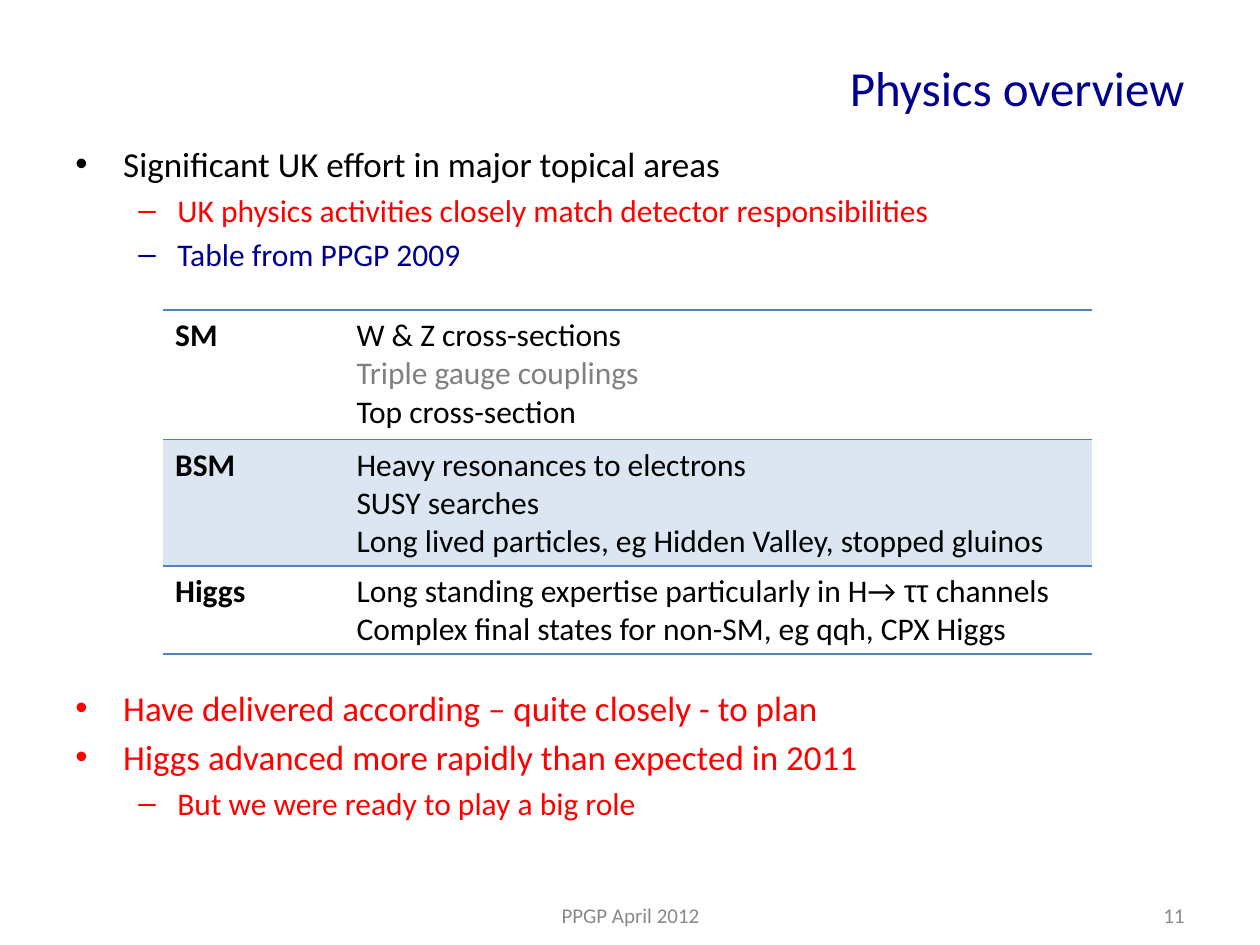
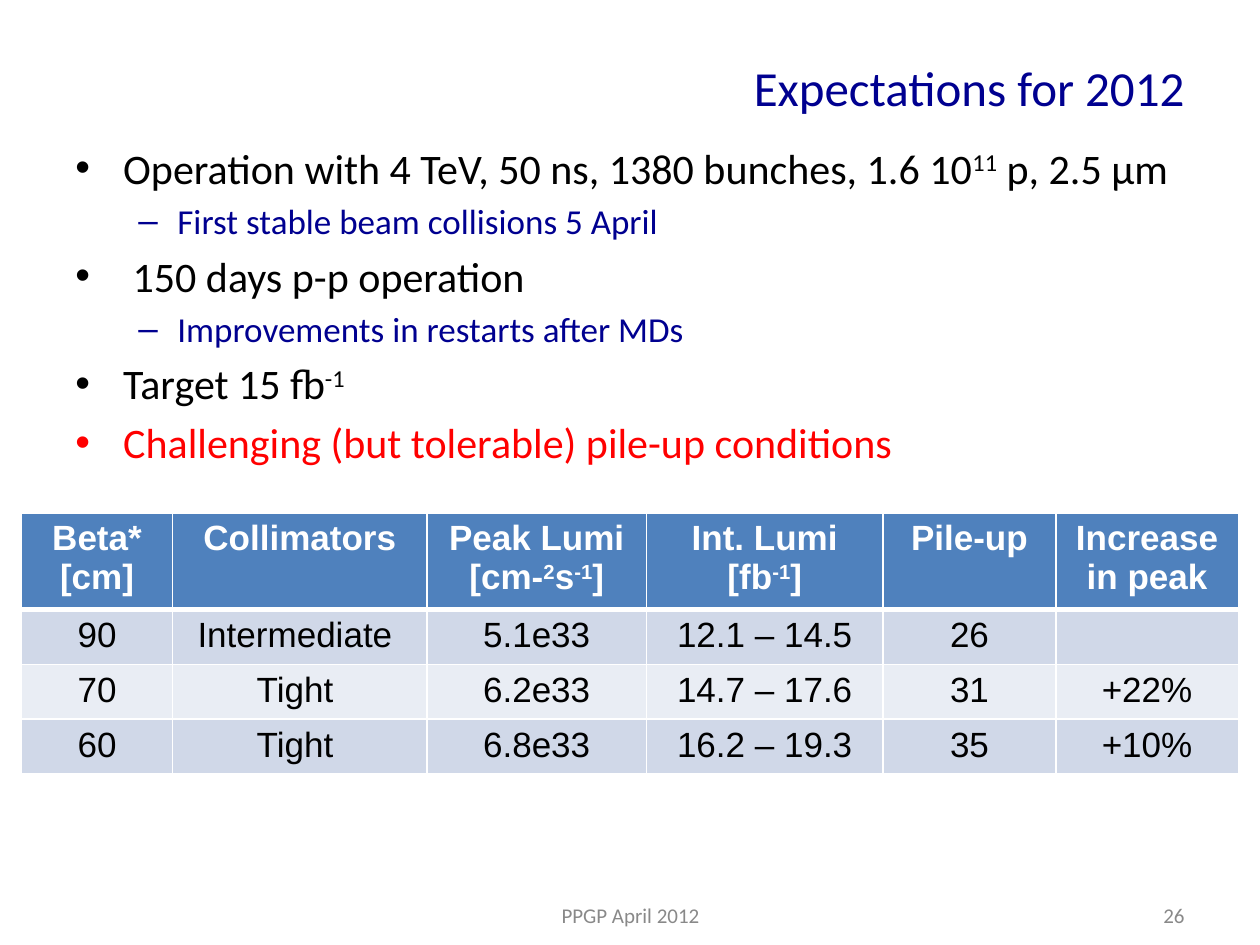
from pptx import Presentation
from pptx.dml.color import RGBColor
from pptx.enum.text import MSO_ANCHOR as Anchor, PP_ALIGN as Align
from pptx.oxml.ns import qn
from pptx.util import Inches, Pt
from lxml.etree import SubElement

BLACK = RGBColor(0x00, 0x00, 0x00)
WHITE = RGBColor(0xFF, 0xFF, 0xFF)
NAVY = RGBColor(0x00, 0x00, 0x90)
RED = RGBColor(0xFF, 0x00, 0x00)
GREY = RGBColor(0x80, 0x80, 0x80)
FOOTER_GREY = RGBColor(0x89, 0x89, 0x89)
BLUE = RGBColor(0x4F, 0x81, 0xBD)
PALE_BLUE = RGBColor(0xDC, 0xE6, 0xF2)
BAND_DARK = RGBColor(0xD0, 0xD8, 0xE8)
BAND_LIGHT = RGBColor(0xE9, 0xED, 0xF4)

TITLE_FORMAT = dict(name="Calibri", size=Pt(28), color=NAVY)
BODY_FORMAT = dict(name="Calibri", color=BLACK)
FOOTER_FORMAT = dict(name="Calibri", size=Pt(12), color=FOOTER_GREY)
TOPIC_FORMAT = dict(name="Calibri", size=Pt(18), color=BLACK)
BEAM_FORMAT = dict(name="Arial", size=Pt(20), color=BLACK)
SUPERSCRIPT = dict(baseline=30000)

# Bullet character, left margin and hanging indent of each level
BULLETS = [("•", 0.38, -0.38), ("–", 0.81, -0.31)]
NO_STYLE_NO_GRID = "{2D5ABB26-0587-4C30-8999-92F81FD0307C}"


def write_runs(paragraph, content, text_format):
    """Write a string, or a list of (text, format changes) runs."""
    runs = [(content, {})] if isinstance(content, str) else content
    for text, changes in runs:
        run = paragraph.add_run()
        run.text = text
        for attribute, value in {**text_format, **changes}.items():
            if attribute == "color":
                run.font.color.rgb = value
            elif attribute == "baseline":
                run._r.get_or_add_rPr().set("baseline", str(value))
            else:
                setattr(run.font, attribute, value)


def next_paragraph(text_frame, index):
    return text_frame.add_paragraph() if index else text_frame.paragraphs[0]


def add_text_box(slide, left, top, width, height):
    box = slide.shapes.add_textbox(Inches(left), Inches(top), Inches(width), Inches(height))
    box.text_frame.word_wrap = True
    return box.text_frame


def add_footer(slide, left, width, text, alignment):
    text_frame = add_text_box(slide, left, 7.17, width, 0.18)
    text_frame.margin_top = text_frame.margin_bottom = 0
    text_frame.vertical_anchor = Anchor.MIDDLE
    paragraph = text_frame.paragraphs[0]
    paragraph.alignment = alignment
    write_runs(paragraph, text, FOOTER_FORMAT)


def add_titled_slide(presentation, title, number):
    """Add a slide with its right-aligned title and footers."""
    slide = presentation.slides.add_slide(presentation.slide_layouts[5])
    shape = slide.shapes.title
    shape.left, shape.top = Inches(0.5), Inches(0.3)
    shape.width, shape.height = Inches(9), Inches(0.78)
    shape.text_frame.vertical_anchor = Anchor.MIDDLE
    paragraph = shape.text_frame.paragraphs[0]
    paragraph.alignment = Align.RIGHT
    write_runs(paragraph, title, TITLE_FORMAT)
    add_footer(slide, 3.42, 3.17, "PPGP April 2012", Align.CENTER)
    add_footer(slide, 7.17, 2.33, str(number), Align.RIGHT)
    return slide


def add_bullets(slide, top, height, sizes, items):
    """Add (level, colour, content) bullets; sizes holds one text size per level."""
    text_frame = add_text_box(slide, 0.5, top, 9, height)
    for index, (level, color, content) in enumerate(items):
        paragraph = next_paragraph(text_frame, index)
        paragraph.level = level
        if index:
            paragraph.space_before = Pt(sizes[level] * 0.2)
        character, margin, indent = BULLETS[level]
        properties = paragraph._p.get_or_add_pPr()
        properties.set("marL", str(Inches(margin)))
        properties.set("indent", str(Inches(indent)))
        SubElement(properties, qn("a:buFont"), typeface="Arial")
        SubElement(properties, qn("a:buChar"), char=character)
        write_runs(paragraph, content, {**BODY_FORMAT, "size": Pt(sizes[level]), "color": color})


def add_plain_table(slide, left, top, widths, heights):
    frame = slide.shapes.add_table(len(heights), len(widths), Inches(left), Inches(top),
                                   Inches(sum(widths)), Inches(sum(heights)))
    table = frame.table
    table._tbl.tblPr.find(qn("a:tableStyleId")).text = NO_STYLE_NO_GRID
    table.first_row = table.horz_banding = False
    for column, width in zip(table.columns, widths):
        column.width = Inches(width)
    for row, height in zip(table.rows, heights):
        row.height = Inches(height)
    return table


def set_borders(cell, color, widths):
    """Draw the sides given in widths, a dict of side letter to points."""
    properties = cell._tc.get_or_add_tcPr()
    for side in "LRTB":
        if side in widths:
            line = SubElement(properties, qn(f"a:ln{side}"), w=str(Pt(widths[side])))
            fill = SubElement(line, qn("a:solidFill"))
            SubElement(fill, qn("a:srgbClr"), val=str(color))


def fill_cell(cell, lines, text_format, fill=None, alignment=Align.LEFT, indent=0):
    if fill is None:
        cell.fill.background()
    else:
        cell.fill.solid()
        cell.fill.fore_color.rgb = fill
    for index, content in enumerate(lines):
        paragraph = next_paragraph(cell.text_frame, index)
        paragraph.alignment = alignment
        paragraph._p.get_or_add_pPr().set("marL", str(Inches(indent)))
        write_runs(paragraph, content, text_format)


def add_topic_table(slide):
    topics = [
        ("SM", None, {"T": 1}, [
            "W & Z cross-sections",
            [("Triple gauge couplings", dict(color=GREY))],
            "Top cross-section"]),
        ("BSM", PALE_BLUE, {"T": 1}, [
            "Heavy resonances to electrons",
            "SUSY searches",
            "Long lived particles, eg Hidden Valley, stopped gluinos"]),
        ("Higgs", None, {"B": 1}, [
            [("Long standing expertise particularly in H→ ", {}),
             ("ττ", dict(name="Arial")), (" channels", {})],
            "Complex final states for non-SM, eg qqh, CPX Higgs"]),
    ]
    table = add_plain_table(slide, 1.29, 2.46, [1.34, 6.04], [1.03, 1, 0.7])
    for row, (area, fill, borders, lines) in zip(table.rows, topics):
        area_cell, lines_cell = row.cells
        for cell in row.cells:
            set_borders(cell, BLUE, borders)
        fill_cell(area_cell, [area], {**TOPIC_FORMAT, "bold": True}, fill)
        fill_cell(lines_cell, lines, TOPIC_FORMAT, fill, indent=0.1)


def add_beam_table(slide):
    header = [
        ["Beta*", "[cm]"],
        ["Collimators"],
        ["Peak Lumi", [("[cm-", {}), ("2", SUPERSCRIPT), ("s", {}),
                       ("-1", SUPERSCRIPT), ("]", {})]],
        ["Int. Lumi", [("[fb", {}), ("-1", SUPERSCRIPT), ("]", {})]],
        ["Pile-up"],
        ["Increase in peak"],
    ]
    scenarios = [
        ("90", "Intermediate ", "5.1e33", "12.1 – 14.5", "26", ""),
        ("70", "Tight ", "6.2e33", "14.7 – 17.6", "31", "+22%"),
        ("60", "Tight ", "6.8e33", "16.2 – 19.3", "35", "+10%"),
    ]
    table = add_plain_table(slide, 0.17, 4.07, [1.2, 2.02, 1.74, 1.88, 1.37, 1.45],
                            [0.77] + [0.43] * len(scenarios))
    header_format = {**BEAM_FORMAT, "bold": True, "color": WHITE}
    rows = [(header, header_format, BLUE, 3)]
    for index, values in enumerate(scenarios):
        band = BAND_LIGHT if index % 2 else BAND_DARK
        rows.append(([[value] if value else [] for value in values], BEAM_FORMAT, band, 1))
    for index, (row, (entries, text_format, fill, bottom)) in enumerate(zip(table.rows, rows)):
        top = rows[index - 1][3] if index else 1
        for cell, lines in zip(row.cells, entries):
            set_borders(cell, WHITE, {"L": 1, "R": 1, "T": top, "B": bottom})
            fill_cell(cell, lines, text_format, fill, Align.CENTER)


def build_physics_overview(presentation):
    slide = add_titled_slide(presentation, "Physics overview", 11)
    sizes = (20, 18)
    add_bullets(slide, 1.08, 1.3, sizes, [
        (0, BLACK, "Significant UK effort in major topical areas"),
        (1, RED, "UK physics activities closely match detector responsibilities"),
        (1, NAVY, "Table from PPGP 2009"),
    ])
    add_topic_table(slide)
    add_bullets(slide, 5.4, 1.55, sizes, [
        (0, RED, "Have delivered according – quite closely - to plan"),
        (0, RED, "Higgs advanced more rapidly than expected in 2011"),
        (1, RED, "But we were ready to play a big role"),
    ])


def build_expectations(presentation):
    slide = add_titled_slide(presentation, "Expectations for 2012", 26)
    add_bullets(slide, 1.08, 2.9, (24, 20), [
        (0, BLACK, [("Operation with 4 TeV, 50 ns, 1380 bunches, 1.6 10", {}),
                    ("11", SUPERSCRIPT), (" p, 2.5 µm", {})]),
        (1, NAVY, "First stable beam collisions 5 April"),
        (0, BLACK, " 150 days p-p operation"),
        (1, NAVY, "Improvements in restarts after MDs"),
        (0, BLACK, [("Target 15 fb", {}), ("-1", SUPERSCRIPT)]),
        (0, RED, "Challenging (but tolerable) pile-up conditions"),
    ])
    add_beam_table(slide)


def main():
    presentation = Presentation()
    presentation.slide_width, presentation.slide_height = Inches(10), Inches(7.5)
    build_physics_overview(presentation)
    build_expectations(presentation)
    presentation.save("out.pptx")


if __name__ == "__main__":
    main()
